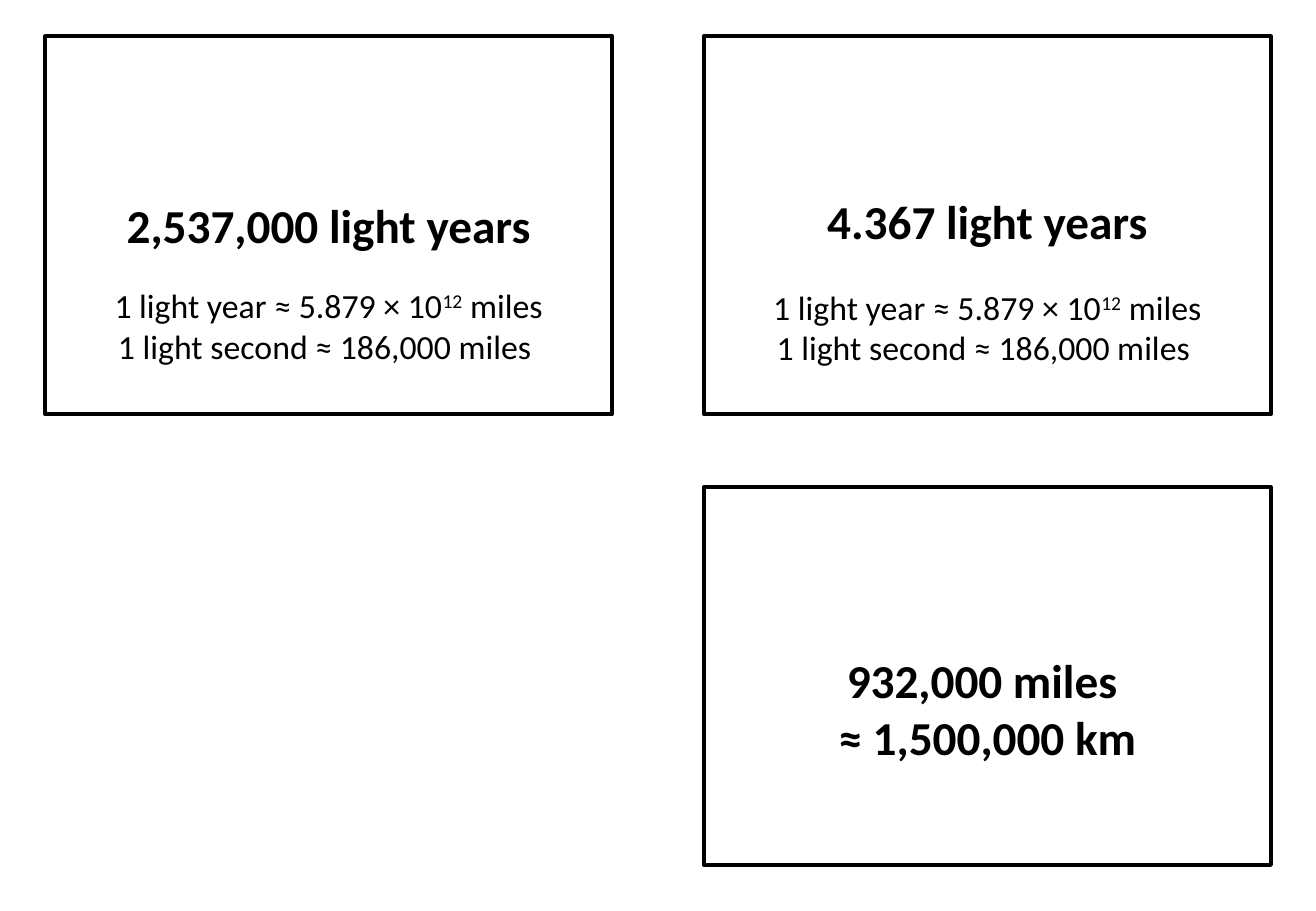
"""Builds a slide of distance cards with light-year and mile values."""
from dataclasses import dataclass

from pptx import Presentation
from pptx.enum.shapes import MSO_SHAPE
from pptx.enum.text import MSO_AUTO_SIZE, PP_ALIGN
from pptx.dml.color import RGBColor
from pptx.slide import Slide
from pptx.text.text import _Paragraph as Paragraph
from pptx.util import Cm, Pt

RECTANGLE = MSO_SHAPE.RECTANGLE
CENTER = PP_ALIGN.CENTER
GROW = MSO_AUTO_SIZE.SHAPE_TO_FIT_TEXT

COLORS = {"ink": "000000", "paper": "FFFFFF"}
FONT = "Calibri"
BLANK_LAYOUT = 6
LEFT, TOP = 0.94, 0.76
CARD_WIDTH, CARD_HEIGHT = 11.86, 7.9
COLUMN_STEP, ROW_STEP = 13.77, 9.43
SUPERSCRIPT_MARK = "^"
SUPERSCRIPT_BASELINE = "30000"
CONVERSIONS = (
    "1 light year ≈ 5.879 × 10^12^ miles",
    "1 light second ≈ 186,000 miles ",
)


@dataclass(frozen=True)
class Label:
    """Lines of text placed at an offset below the top of a card."""

    lines: tuple[str, ...]
    offset: float
    height: float
    size: int
    bold: bool


@dataclass(frozen=True)
class Card:
    """A framed card in a column and row of the grid."""

    column: int
    row: int
    labels: tuple[Label, ...]


def distance(offset: float, height: float, *lines: str) -> Label:
    """Describe the bold distance on a card."""
    return Label(lines, offset, height, 28, True)


def conversions(offset: float) -> Label:
    """Describe the unit conversions on a card."""
    return Label(CONVERSIONS, offset, 1.96, 20, False)


CARDS = (
    Card(1, 1, (distance(3.3, 2.64, "932,000 miles ", "≈ 1,500,000 km"),)),
    Card(1, 0, (distance(3.13, 1.45, "4.367 light years"), conversions(5.11))),
    Card(0, 0, (distance(3.23, 1.45, "2,537,000 light years"), conversions(5.08))),
)


def color(name: str) -> RGBColor:
    """Look up a named colour."""
    return RGBColor.from_string(COLORS[name])


def write_line(para: Paragraph, line: str, label: Label) -> None:
    """Write one centred line, raising the text between marks."""
    para.alignment = CENTER
    for index, part in enumerate(line.split(SUPERSCRIPT_MARK)):
        span = para.add_run()
        span.text = part
        span.font.name = FONT
        span.font.size = Pt(label.size)
        span.font.bold = label.bold
        span.font.color.rgb = color("ink")
        if index % 2:
            span._r.get_or_add_rPr().set("baseline", SUPERSCRIPT_BASELINE)


def draw_label(slide: Slide, label: Label, left: float, top: float) -> None:
    """Draw a text box across the card."""
    box = slide.shapes.add_textbox(
        Cm(left), Cm(top + label.offset), Cm(CARD_WIDTH), Cm(label.height)
    )
    frame = box.text_frame
    frame.word_wrap = True
    frame.auto_size = GROW
    for index, line in enumerate(label.lines):
        para = frame.add_paragraph() if index else frame.paragraphs[0]
        write_line(para, line, label)


def draw_card(slide: Slide, card: Card) -> None:
    """Draw a card frame and its labels."""
    left = LEFT + card.column * COLUMN_STEP
    top = TOP + card.row * ROW_STEP
    box = slide.shapes.add_shape(
        RECTANGLE, Cm(left), Cm(top), Cm(CARD_WIDTH), Cm(CARD_HEIGHT)
    )
    box.shadow.inherit = False
    box.fill.background()
    box.line.color.rgb = color("ink")
    box.line.width = Pt(2.25)
    for label in card.labels:
        draw_label(slide, label, left, top)


def main() -> None:
    """Build and save the deck."""
    deck = Presentation()
    deck.slide_width, deck.slide_height = Cm(27.51), Cm(19.05)
    page = deck.slides.add_slide(deck.slide_layouts[BLANK_LAYOUT])
    page.background.fill.solid()
    page.background.fill.fore_color.rgb = color("paper")
    for card in CARDS:
        draw_card(page, card)
    deck.save("out.pptx")


if __name__ == "__main__":
    main()
